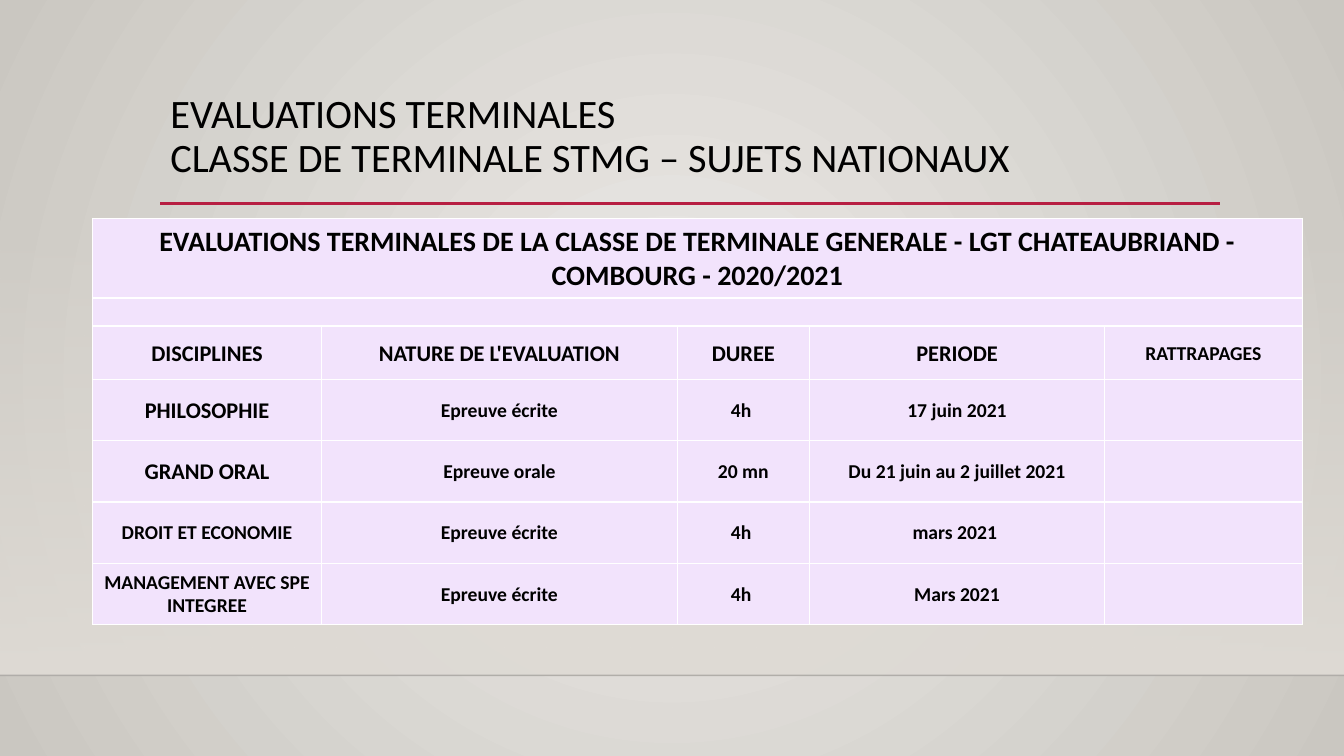
from dataclasses import dataclass
from typing import Optional

from lxml import etree
from pptx import Presentation
from pptx.dml.color import RGBColor
from pptx.enum import shapes, text
from pptx.oxml import ns
from pptx.util import Pt


@dataclass(frozen=True)
class Theme:
    font: str = "Calibri"
    ink: str = "000000"
    cell: str = "F2E3FC"
    grid: str = "FFFFFF"
    accent: str = "B71E42"
    edge: str = "000001"
    glow: str = "ECEAE7"
    rim: str = "CAC7C1"
    floor: str = "DFDBD5"
    title: float = 28.8
    banner: float = 20
    head: float = 16
    body: float = 14


@dataclass(frozen=True)
class Rule:
    left: float
    right: float
    top: float
    color: str
    width: float
    alpha: Optional[int] = None


@dataclass(frozen=True)
class Entry:
    words: str
    size: float


LOOK = Theme()
WIDE, HIGH = 960, 540
RULES = [
    Rule(0, WIDE, 482.4, LOOK.edge, 1, 20),
    Rule(114.5, 871.2, 145.4, LOOK.accent, 2.5),
]
TITLE = ["EVALUATIONS TERMINALES", "CLASSE DE TERMINALE STMG – SUJETS NATIONAUX"]
BANNER = ("EVALUATIONS TERMINALES DE LA CLASSE DE TERMINALE GENERALE"
          " - LGT CHATEAUBRIAND - COMBOURG - 2020/2021")
COLS = [163.5, 254.2, 94.3, 211, 141]
ROWS = [57, 20, 38.4] + [43.7] * 4
BIG, MID = LOOK.head, LOOK.body
HEADS = [
    Entry("DISCIPLINES", BIG), Entry("NATURE DE L'EVALUATION", BIG),
    Entry("DUREE", BIG), Entry("PERIODE", BIG), Entry("RATTRAPAGES", MID),
]
EXAMS = [
    (Entry("PHILOSOPHIE", BIG), "Epreuve écrite", "4h ", "17 juin 2021"),
    (Entry("GRAND ORAL", BIG), "Epreuve orale", "20 mn", "Du 21 juin au 2 juillet 2021"),
    (Entry("DROIT ET ECONOMIE", MID), "Epreuve écrite", "4h ", "mars 2021 "),
    (Entry("MANAGEMENT AVEC SPE INTEGREE", MID), "Epreuve écrite", "4h ", "Mars 2021"),
]


def add_tag(parent, tag: str, **attrs):
    return etree.SubElement(parent, ns.qn(tag), **attrs)


def add_stops(grad, stops) -> None:
    """Add (place in percent, colour, opacity in percent) stops."""
    items = add_tag(grad, "a:gsLst")
    for place, color, alpha in stops:
        stop = add_tag(items, "a:gs", pos=str(place * 1000))
        tint = add_tag(stop, "a:srgbClr", val=color)
        if alpha < 100:
            add_tag(tint, "a:alpha", val=str(alpha * 1000))


def reset_grad(fill, owner):
    """Turn a fill into an empty gradient and return its element."""
    fill.gradient()
    grad = owner.find(".//" + ns.qn("a:gradFill"))
    for child in list(grad):
        grad.remove(child)
    return grad


def paint_back(slide) -> None:
    grad = reset_grad(slide.background.fill, slide.element)
    add_stops(grad, [(0, LOOK.glow, 100), (100, LOOK.rim, 100)])
    ring = add_tag(grad, "a:path", path="circle")
    add_tag(ring, "a:fillToRect", l="50000", t="50000", r="50000", b="50000")


def draw_floor(slide) -> None:
    floor = slide.shapes.add_shape(
        shapes.MSO_SHAPE.RECTANGLE, 0, Pt(159.1), Pt(WIDE), Pt(323.3))
    floor.shadow.inherit = False
    floor.line.fill.background()
    grad = reset_grad(floor.fill, floor.element)
    add_stops(grad, [(0, LOOK.floor, 0), (100, LOOK.floor, 100)])
    add_tag(grad, "a:lin", ang="5400000", scaled="0")


def draw_rule(slide, rule: Rule) -> None:
    line = slide.shapes.add_connector(
        shapes.MSO_CONNECTOR.STRAIGHT,
        Pt(rule.left), Pt(rule.top), Pt(rule.right), Pt(rule.top))
    line.line.width = Pt(rule.width)
    line.line.color.rgb = RGBColor.from_string(rule.color)
    props = line.element.spPr
    if rule.alpha is not None:
        tint = props.find(".//" + ns.qn("a:srgbClr"))
        add_tag(tint, "a:alpha", val=str(rule.alpha * 1000))
    add_tag(props, "a:effectLst")


def add_run(para, words: str, size: float, bold: bool) -> None:
    run = para.add_run()
    run.text = words
    font = run.font
    font.name, font.size, font.bold = LOOK.font, Pt(size), bold
    font.color.rgb = RGBColor.from_string(LOOK.ink)


def fill_title(slide) -> None:
    title = slide.shapes.title
    title.left, title.top, title.width, title.height = map(Pt, (114.5, 63.4, 756, 82.8))
    frame = title.text_frame
    frame.word_wrap = True
    frame.auto_size = text.MSO_AUTO_SIZE.NONE
    frame.vertical_anchor = text.MSO_ANCHOR.TOP
    para = frame.paragraphs[0]
    para.alignment = text.PP_ALIGN.LEFT
    para.line_spacing = 0.9
    for order, words in enumerate(TITLE):
        if order:
            para.add_line_break()
        add_run(para, words, LOOK.title, False)


def style_cell(cell) -> None:
    cell.margin_left = cell.margin_right = cell.margin_top = Pt(0.72)
    cell.margin_bottom = 0
    cell.vertical_anchor = text.MSO_ANCHOR.MIDDLE
    props = cell._tc.get_or_add_tcPr()
    for side in ("a:lnL", "a:lnR", "a:lnT", "a:lnB"):
        edge = add_tag(props, side, w=str(Pt(1)))
        add_tag(add_tag(edge, "a:solidFill"), "a:srgbClr", val=LOOK.grid)
    cell.fill.solid()
    cell.fill.fore_color.rgb = RGBColor.from_string(LOOK.cell)


def write_cell(cell, entry: Optional[Entry]) -> None:
    para = cell.text_frame.paragraphs[0]
    para.alignment = text.PP_ALIGN.CENTER
    if entry:
        add_run(para, entry.words, entry.size, True)
    else:
        add_tag(para._p, "a:endParaRPr", sz="1200")


def draw_table(slide) -> None:
    table = slide.shapes.add_table(
        len(ROWS), len(COLS), Pt(66.2), Pt(155.9), Pt(sum(COLS)), Pt(sum(ROWS))).table
    for col, width in zip(table.columns, COLS):
        col.width = Pt(width)
    for row, height in zip(table.rows, ROWS):
        row.height = Pt(height)
    blank = [None] * len(COLS)
    grid = [[Entry(BANNER, LOOK.banner)] + blank[1:], blank, HEADS]
    for name, *facts in EXAMS:
        grid.append([name] + [Entry(fact, MID) for fact in facts] + [None])
    for y, line in enumerate(grid):
        for x, entry in enumerate(line):
            style_cell(table.cell(y, x))
            write_cell(table.cell(y, x), entry)
    for y in range(2):
        table.cell(y, 0).merge(table.cell(y, len(COLS) - 1))


def main() -> None:
    deck = Presentation()
    deck.slide_width, deck.slide_height = Pt(WIDE), Pt(HIGH)
    slide = deck.slides.add_slide(deck.slide_layouts.get_by_name("Title Only"))
    paint_back(slide)
    draw_floor(slide)
    for rule in RULES:
        draw_rule(slide, rule)
    fill_title(slide)
    draw_table(slide)
    deck.save("out.pptx")


if __name__ == "__main__":
    main()
